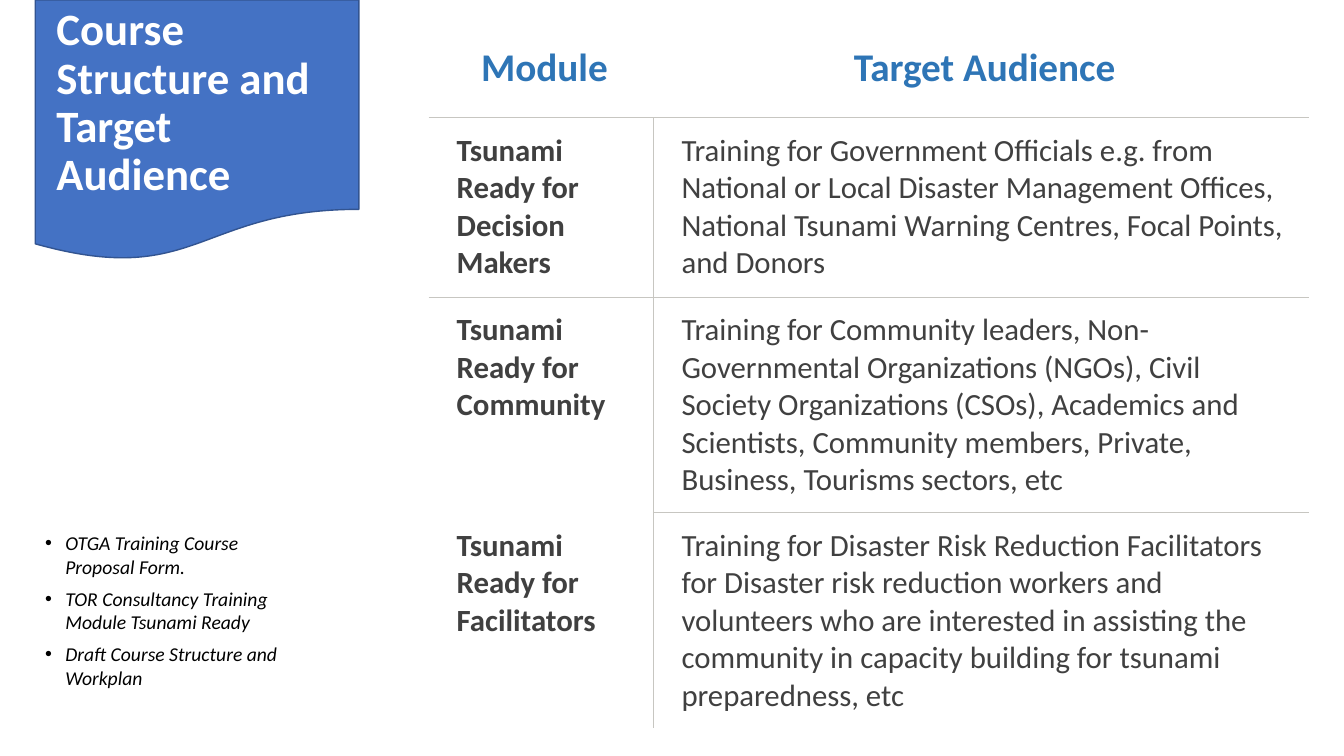
"""Builds the course structure and target audience slide."""
import pptx
import pptx.util
import pptx.dml.color
import pptx.enum.shapes
import pptx.enum.text
import pptx.oxml
import pptx.oxml.ns
from dataclasses import dataclass

Inches = pptx.util.Inches
Pt = pptx.util.Pt
ALIGN = pptx.enum.text.PP_ALIGN
ANCHOR = pptx.enum.text.MSO_ANCHOR
FIT = pptx.enum.text.MSO_AUTO_SIZE

TITLE = "Course Structure and Target Audience"
HEADS = ("Module", "Target Audience")
ROWS = [
    ("Tsunami Ready for Decision Makers",
     "Training for Government Officials e.g. from National or Local Disaster "
     "Management Offices, National Tsunami Warning Centres, Focal Points, and Donors"),
    ("Tsunami Ready for Community",
     "Training for Community leaders, Non-Governmental Organizations (NGOs), "
     "Civil Society Organizations (CSOs), Academics and Scientists, Community "
     "members, Private, Business, Tourisms sectors, etc"),
    ("Tsunami Ready for Facilitators",
     "Training for Disaster Risk Reduction Facilitators for Disaster risk reduction "
     "workers and volunteers who are interested in assisting the community in "
     "capacity building for tsunami preparedness, etc"),
]
NOTES = ["OTGA Training Course Proposal Form.",
         "TOR Consultancy Training Module Tsunami Ready",
         "Draft Course Structure and Workplan"]
WIDTHS = (2.23, 6.5)
HEIGHTS = (0.87, 1.78, 2.13, 2.13)
PLAIN = "{2D5ABB26-0587-4C30-8999-92F81FD0307C}"


@dataclass(frozen=True)
class Theme:
    """Holds the colours, font and type sizes."""
    font: str = "Calibri"
    white: str = "FFFFFF"
    black: str = "000000"
    blue: str = "4472C4"
    edge: str = "325491"
    head: str = "2E75B6"
    body: str = "404040"
    rule: str = "C7C6C1"
    title_size: int = 32
    head_size: int = 28
    body_size: int = 22
    note_size: int = 14


THEME = Theme()


def rgb(code):
    """Turns a hex code into a colour."""
    return pptx.dml.color.RGBColor.from_string(code)


def write(frame, lines, size, color, bold=False, italic=False,
          align=ALIGN.LEFT, gap=0, spacing=None, bullet=False):
    """Fills a text frame with formatted paragraphs."""
    frame.word_wrap = True
    for index, line in enumerate(lines):
        para = frame.paragraphs[0] if index == 0 else frame.add_paragraph()
        para.text = line
        para.alignment = align
        para.space_before = Pt(gap if index else 0)
        if spacing:
            para.line_spacing = spacing
        if bullet:
            props = para._p.get_or_add_pPr()
            props.set("marL", str(Inches(0.2)))
            props.set("indent", str(Inches(-0.2)))
            mark = pptx.oxml.ns.nsdecls("a")
            props.append(pptx.oxml.parse_xml(f'<a:buFont {mark} typeface="Arial"/>'))
            props.append(pptx.oxml.parse_xml(f'<a:buChar {mark} char="•"/>'))
        font = para.font
        for font in (para.font, para.runs[0].font):
            font.name, font.size = THEME.font, Pt(size)
            font.bold, font.italic = bold, italic
            font.color.rgb = rgb(color)


def border(cell, sides):
    """Draws thin rules on the given sides of a cell."""
    props = cell._tc.get_or_add_tcPr()
    space = pptx.oxml.ns.nsdecls("a")
    for index, side in enumerate(side for side in "LRTB" if side in sides):
        props.insert(index, pptx.oxml.parse_xml(
            f'<a:ln{side} {space} w="{Pt(0.75)}"><a:solidFill>'
            f'<a:srgbClr val="{THEME.rule}"/></a:solidFill></a:ln{side}>'))


def add_grid(slide):
    """Adds the table of modules and audiences."""
    count = len(HEIGHTS)
    frame = slide.shapes.add_table(count, len(WIDTHS), Inches(4.25), Inches(0.3),
                                   Inches(sum(WIDTHS)), Inches(sum(HEIGHTS)))
    grid = frame.table
    grid.first_row = grid.horz_banding = False
    grid._tbl.tblPr.find(pptx.oxml.ns.qn("a:tableStyleId")).text = PLAIN
    for col, width in zip(grid.columns, WIDTHS):
        col.width = Inches(width)
    for row, height in zip(grid.rows, HEIGHTS):
        row.height = Inches(height)
    for r, texts in enumerate([HEADS, *ROWS]):
        for c, text in enumerate(texts):
            cell = grid.cell(r, c)
            cell.margin_left, cell.margin_right = Inches(0.28), Inches(0.21)
            cell.margin_top = cell.margin_bottom = Inches(0.14)
            cell.fill.background()
            if r == 0:
                write(cell.text_frame, [text], THEME.head_size, THEME.head,
                      bold=True, align=ALIGN.CENTER)
                border(cell, "B")
            else:
                write(cell.text_frame, [text], THEME.body_size, THEME.body,
                      bold=c == 0)
                sides = "L" if c else "R"
                sides += "T" if c or r == 1 else ""
                sides += "B" if c and r < count - 1 else ""
                border(cell, sides)


def add_title(slide):
    """Adds the blue banner and sets the title over it."""
    kind = pptx.enum.shapes.MSO_SHAPE.FLOWCHART_DOCUMENT
    flag = slide.shapes.add_shape(kind, Inches(0.35), 0, Inches(3.21), Inches(2.59))
    flag.shadow.inherit = False
    flag.fill.solid()
    flag.fill.fore_color.rgb = rgb(THEME.blue)
    flag.line.color.rgb = rgb(THEME.edge)
    flag.line.width = Pt(1)
    title = slide.shapes.title
    title.left, title.top = Inches(0.46), 0
    title.width, title.height = Inches(3.11), Inches(2.06)
    frame = title.text_frame
    frame.auto_size = FIT.NONE
    frame.vertical_anchor = ANCHOR.MIDDLE
    write(frame, [TITLE], THEME.title_size, THEME.white, bold=True, spacing=0.9)
    flag._element.addnext(title._element)


def add_notes(slide):
    """Adds the bulleted list of documents."""
    box = slide.shapes.add_textbox(Inches(0.35), Inches(5.22), Inches(2.63), Inches(1.68))
    write(box.text_frame, NOTES, THEME.note_size, THEME.black,
          italic=True, gap=6, bullet=True)
    box.text_frame.auto_size = FIT.SHAPE_TO_FIT_TEXT


def main():
    """Builds and saves the deck."""
    deck = pptx.Presentation()
    deck.slide_width, deck.slide_height = Inches(13.33), Inches(7.5)
    slide = deck.slides.add_slide(deck.slide_layouts[5])
    add_grid(slide)
    add_title(slide)
    add_notes(slide)
    deck.save("out.pptx")


if __name__ == "__main__":
    main()
